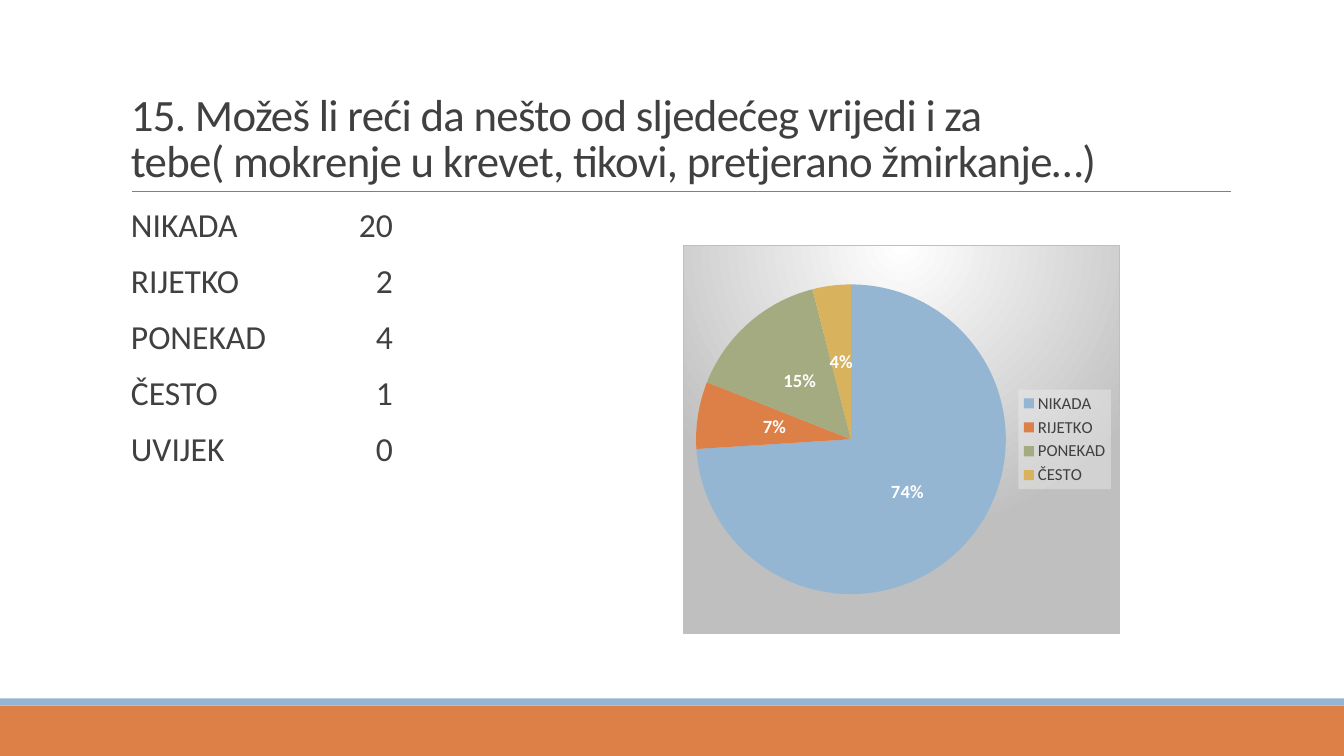
import pptx
import pptx.chart.data
import pptx.dml.color
import pptx.enum.chart
import pptx.enum.shapes
import pptx.enum.text
import pptx.oxml
import pptx.oxml.ns
import pptx.util
from pptx.dml.color import RGBColor
from pptx.util import Cm

BLUE = RGBColor(0x94, 0xB6, 0xD2)
ORANGE = RGBColor(0xDD, 0x80, 0x47)
GREEN = RGBColor(0xA5, 0xAB, 0x81)
GOLD = RGBColor(0xD8, 0xB2, 0x5C)
DARK = RGBColor(0x40, 0x40, 0x40)
GREY = RGBColor(0x80, 0x80, 0x80)
SILVER = RGBColor(0xBF, 0xBF, 0xBF)
WHITE = RGBColor(0xFF, 0xFF, 0xFF)

FONT = "Calibri"
TITLE = ("15. Možeš li reći da nešto od sljedećeg vrijedi i za "
         "tebe( mokrenje u krevet, tikovi, pretjerano žmirkanje…)")
ANSWERS = [("NIKADA", 20), ("RIJETKO", 2), ("PONEKAD", 4), ("ČESTO", 1), ("UVIJEK", 0)]
SHARES = [("NIKADA", 74, BLUE), ("RIJETKO", 7, ORANGE),
          ("PONEKAD", 15, GREEN), ("ČESTO", 4, GOLD)]


def parse_element(tag, content, attributes=""):
    """Build an XML element with the drawing and chart namespaces declared."""
    names = pptx.oxml.ns.nsdecls("a", "c")
    return pptx.oxml.parse_xml(f"<{tag} {names} {attributes}>{content}</{tag}>")


def set_font(font, size, color, bold=False):
    font.name = FONT
    font.size = pptx.util.Pt(size)
    font.bold = bold
    font.color.rgb = color


def add_band(page, top, height, color):
    band = page.shapes.add_shape(pptx.enum.shapes.MSO_SHAPE.RECTANGLE,
                                 0, top, Cm(33.87), height)
    band.shadow.inherit = False
    band.fill.solid()
    band.fill.fore_color.rgb = color
    band.line.fill.background()


def add_rule(page, left, right, top):
    rule = page.shapes.add_connector(pptx.enum.shapes.MSO_CONNECTOR.STRAIGHT,
                                     left, top, right, top)
    rule.line.color.rgb = GREY
    rule.line.width = pptx.util.Pt(0.5)
    rule._element.spPr.append(parse_element("a:effectLst", ""))


def add_title(page, text):
    box = page.shapes.add_textbox(Cm(3.05), Cm(0.79), Cm(27.94), Cm(4.04))
    frame = box.text_frame
    frame.word_wrap = True
    frame.vertical_anchor = pptx.enum.text.MSO_ANCHOR.BOTTOM
    frame.text = text
    para = frame.paragraphs[0]
    para.line_spacing = 0.85
    span = para.runs[0]
    set_font(span.font, 32, DARK)
    span._r.get_or_add_rPr().set("spc", "-50")


def add_answers(page, answers):
    box = page.shapes.add_textbox(Cm(3.05), Cm(5.13), Cm(27.94), Cm(11.18))
    frame = box.text_frame
    frame.word_wrap = True
    frame.margin_left = frame.margin_right = 0
    frame.text = "\n".join(f"{answer}\t{count}" for answer, count in answers)
    for para in frame.paragraphs:
        para.line_spacing = 0.9
        para.space_before = pptx.util.Pt(12)
        para.space_after = pptx.util.Pt(2)
        for span in para.runs:
            set_font(span.font, 24, DARK)
        # The counts line up on a right-aligned tab stop
        properties = para._p.get_or_add_pPr()
        properties.set("marL", str(Cm(0.25)))
        properties.append(parse_element(
            "a:tabLst", f'<a:tab pos="{Cm(6.6)}" algn="r"/>'))


def style_chart_area(chart):
    """Radial gradient background, grey border."""
    area = parse_element("c:spPr", f"""
        <a:gradFill><a:gsLst>
          <a:gs pos="0"><a:srgbClr val="{WHITE}"/></a:gs>
          <a:gs pos="100000"><a:srgbClr val="{SILVER}"/></a:gs>
        </a:gsLst><a:path path="circle">
          <a:fillToRect l="50000" t="0" r="50000" b="100000"/>
        </a:path></a:gradFill>
        <a:ln w="9525"><a:solidFill><a:srgbClr val="{SILVER}"/></a:solidFill></a:ln>""")
    chart._chartSpace.chart.addnext(area)


def style_legend(chart):
    chart.has_legend = True
    legend = chart.legend
    legend.position = pptx.enum.chart.XL_LEGEND_POSITION.RIGHT
    legend.include_in_layout = False
    set_font(legend.font, 12, DARK)
    panel = parse_element("c:spPr", """<a:solidFill><a:srgbClr val="F2F2F2">
        <a:alpha val="39000"/></a:srgbClr></a:solidFill>""")
    legend._element.find(pptx.oxml.ns.qn("c:txPr")).addprevious(panel)


def place_plot(chart, **fractions):
    """Fix the pie's place as fractions of the chart area."""
    area = chart._chartSpace.chart.plotArea
    for layout in area.findall(pptx.oxml.ns.qn("c:layout")):
        area.remove(layout)
    places = "".join(f'<c:{name} val="{value}"/>' for name, value in fractions.items())
    area.insert(0, parse_element("c:layout", f"""<c:manualLayout>
        <c:layoutTarget val="inner"/><c:xMode val="edge"/><c:yMode val="edge"/>
        {places}</c:manualLayout>"""))


def add_pie(page, shares):
    data = pptx.chart.data.CategoryChartData()
    data.categories = [name for name, _, _ in shares]
    data.add_series("Series 1", [share for _, share, _ in shares])
    chart = page.shapes.add_chart(pptx.enum.chart.XL_CHART_TYPE.PIE,
                                  Cm(17.2), Cm(6.17), Cm(11.02), Cm(9.8), data).chart
    chart.has_title = False
    set_font(chart.font, 10, DARK)
    plot = chart.plots[0]
    plot.vary_by_categories = True
    for index, (_, _, color) in enumerate(shares):
        fill = plot.series[0].points[index].format.fill
        fill.solid()
        fill.fore_color.rgb = color

    plot.has_data_labels = True
    labels = plot.data_labels
    labels.show_percentage = True
    labels.show_value = False
    labels.number_format = "0%"
    labels.number_format_is_linked = False
    labels.position = pptx.enum.chart.XL_LABEL_POSITION.CENTER
    set_font(labels.font, 13.3, WHITE, bold=True)

    style_legend(chart)
    style_chart_area(chart)
    place_plot(chart, x=0.03, y=0.1, w=0.71, h=0.8)


def main():
    deck = pptx.Presentation()
    deck.slide_width, deck.slide_height = Cm(33.87), Cm(19.05)
    page = deck.slides.add_slide(deck.slide_layouts[6])

    # Footer bands and the rule under the title
    add_band(page, Cm(17.78), Cm(1.27), ORANGE)
    add_band(page, Cm(17.6), Cm(0.18), BLUE)
    add_rule(page, Cm(3.33), Cm(31.01), Cm(4.83))

    # Question, counts and shares
    add_title(page, TITLE)
    add_answers(page, ANSWERS)
    add_pie(page, SHARES)

    deck.save("out.pptx")


if __name__ == "__main__":
    main()
